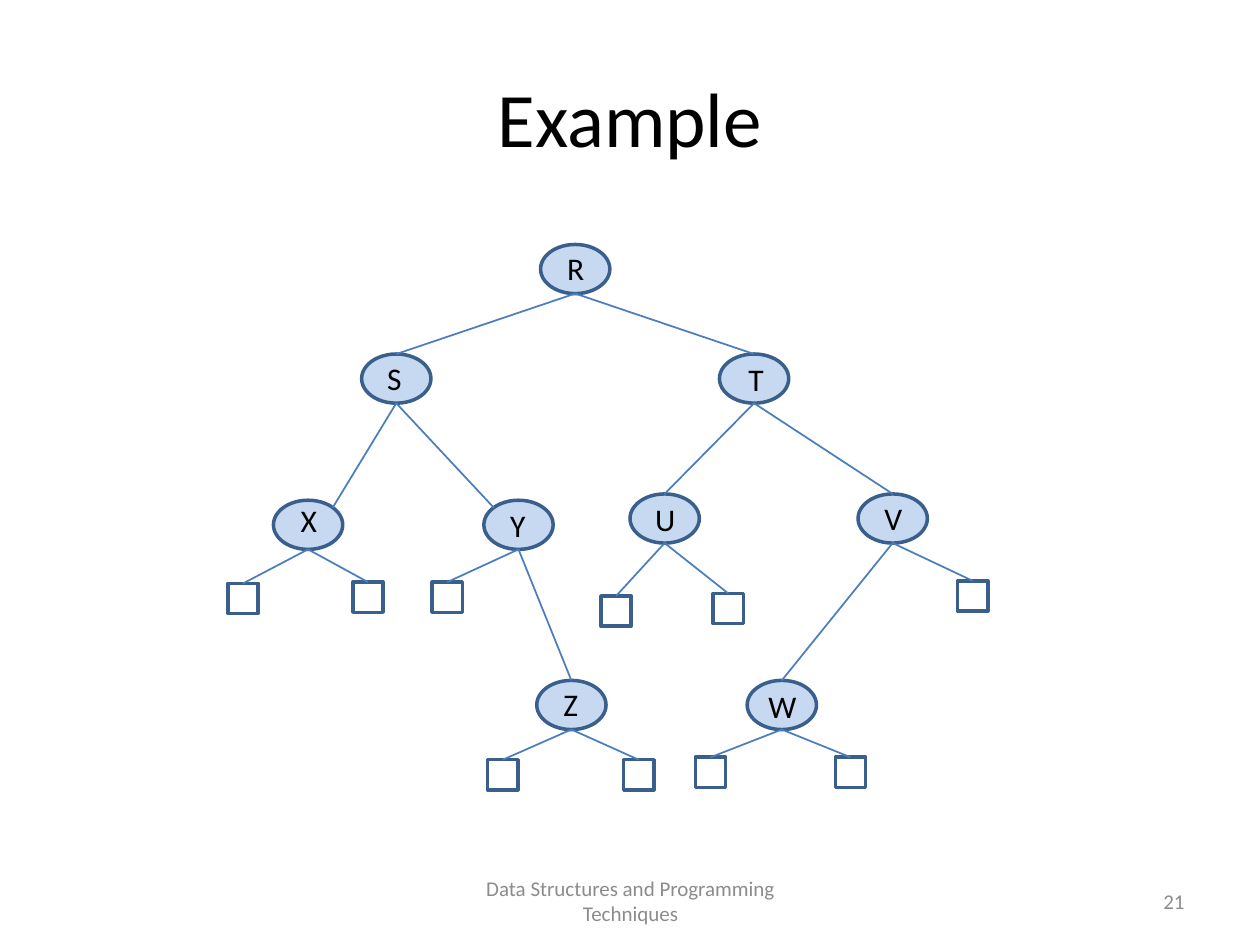
from lxml.etree import SubElement
from pptx import Presentation
from pptx.dml.color import RGBColor
from pptx.enum.shapes import MSO_CONNECTOR, MSO_SHAPE
from pptx.enum.text import MSO_ANCHOR, PP_ALIGN
from pptx.oxml.ns import qn
from pptx.util import Inches, Pt

FONT = "Calibri"
COLORS = {
    "text": "000000",
    "footer": "8C8C8C",
    "node": "C6D9F1",
    "outline": "3A5F8C",
    "edge": "4B7EBC",
}
NODE_WIDTH, NODE_HEIGHT = 0.55, 0.39
LEAF_SIZE = 0.24
LABEL_WIDTH, LABEL_HEIGHT = 0.42, 0.4
CORNER_X, CORNER_Y = 0.08, 0.06

NODES = {
    "R": (4.29, 1.94),
    "S": (2.87, 2.81),
    "T": (5.71, 2.81),
    "X": (2.17, 3.97),
    "Y": (3.84, 3.97),
    "U": (5.00, 3.92),
    "V": (6.81, 3.92),
    "Z": (4.26, 5.40),
    "W": (5.93, 5.40),
}
LABELS = {
    "R": (4.36, 1.93),
    "S": (2.92, 2.80),
    "T": (5.79, 2.81),
    "X": (2.24, 3.93),
    "Y": (3.90, 3.97),
    "U": (5.07, 3.92),
    "V": (6.88, 3.91),
    "Z": (4.32, 5.39),
    "W": (6.00, 5.40),
}
TOP_EDGES = ["RS", "RT", "TU", "TV", "YZ", "VW"]
CORNER_EDGES = {
    "SX": NODE_WIDTH - CORNER_X,
    "SY": CORNER_X,
}
LEAVES = {
    "X": [(1.81, 4.63), (2.80, 4.62)],
    "Y": [(3.43, 4.62)],
    "U": [(4.77, 4.73), (5.66, 4.71)],
    "V": [(7.60, 4.61)],
    "Z": [(3.87, 6.03), (4.95, 6.03)],
    "W": [(5.52, 6.01), (6.63, 6.01)],
}


class TreeSlide:
    def __init__(self, deck):
        self.page = deck.slides.add_slide(deck.slide_layouts[5])

    def color(self, name):
        return RGBColor.from_string(COLORS[name])

    def place(self, shape, left, top, width, height):
        shape.left, shape.top = Inches(left), Inches(top)
        shape.width, shape.height = Inches(width), Inches(height)

    def set_text(self, box, text, size, color="text", align=PP_ALIGN.CENTER, anchor=MSO_ANCHOR.MIDDLE):
        frame = box.text_frame
        frame.text = text
        frame.word_wrap = True
        frame.vertical_anchor = anchor
        para = frame.paragraphs[0]
        para.alignment = align
        span = para.runs[0]
        span.font.name = FONT
        span.font.size = Pt(size)
        span.font.color.rgb = self.color(color)

    def title(self, text, *area):
        box = self.page.shapes.title
        self.place(box, *area)
        self.set_text(box, text, 44)

    def text(self, text, area, size, **style):
        box = self.page.shapes.add_textbox(*map(Inches, area))
        self.set_text(box, text, size, **style)

    def outline_shape(self, kind, left, top, width, height):
        shape = self.page.shapes.add_shape(kind, *map(Inches, (left, top, width, height)))
        shape.shadow.inherit = False
        shape.line.color.rgb = self.color("outline")
        shape.line.width = Pt(2)
        return shape

    def node(self, left, top):
        shape = self.outline_shape(MSO_SHAPE.OVAL, left, top, NODE_WIDTH, NODE_HEIGHT)
        shape.fill.solid()
        shape.fill.fore_color.rgb = self.color("node")

    def leaf(self, left, top):
        shape = self.outline_shape(MSO_SHAPE.RECTANGLE, left, top, LEAF_SIZE, LEAF_SIZE)
        shape.fill.background()

    def edge(self, start, end):
        line = self.page.shapes.add_connector(MSO_CONNECTOR.STRAIGHT, *map(Inches, start + end))
        line.line.color.rgb = self.color("edge")
        line.line.width = Pt(1)
        SubElement(line._element.spPr, qn("a:effectLst"))


def bottom_of(name):
    left, top = NODES[name]
    return left + NODE_WIDTH / 2, top + NODE_HEIGHT


def top_of(left, top, width):
    return left + width / 2, top


def main():
    deck = Presentation()
    deck.slide_width, deck.slide_height = Inches(10), Inches(7.5)
    slide = TreeSlide(deck)
    slide.title("Example", 0.5, 0.3, 9, 1.25)

    for name, position in NODES.items():
        slide.node(*position)
        area = (*LABELS[name], LABEL_WIDTH, LABEL_HEIGHT)
        slide.text(name, area, 18, anchor=MSO_ANCHOR.TOP)

    for parent, child in TOP_EDGES:
        slide.edge(bottom_of(parent), top_of(*NODES[child], NODE_WIDTH))
    for (parent, child), offset in CORNER_EDGES.items():
        left, top = NODES[child]
        slide.edge(bottom_of(parent), (left + offset, top + CORNER_Y))

    for parent, positions in LEAVES.items():
        for position in positions:
            slide.leaf(*position)
            slide.edge(bottom_of(parent), top_of(*position, LEAF_SIZE))

    slide.text("Data Structures and Programming Techniques", (3.42, 6.95, 3.17, 0.4), 12, color="footer")
    slide.text("21", (7.17, 6.95, 2.33, 0.4), 12, color="footer", align=PP_ALIGN.RIGHT)
    deck.save("out.pptx")


if __name__ == "__main__":
    main()
